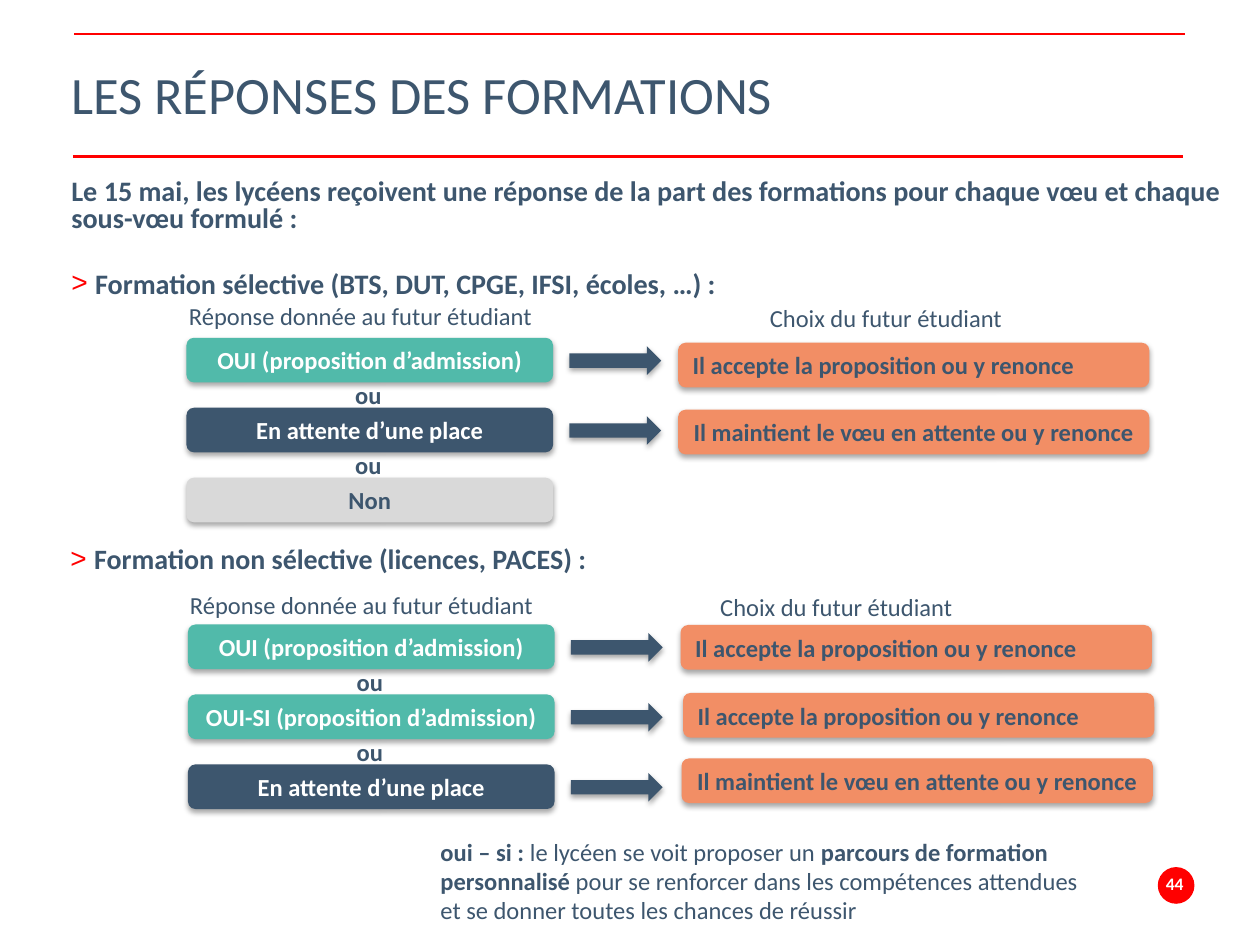
from lxml.etree import SubElement
from pptx import Presentation
from pptx.dml.color import RGBColor
from pptx.enum.shapes import MSO_CONNECTOR, MSO_SHAPE
from pptx.enum.text import MSO_ANCHOR, PP_ALIGN
from pptx.oxml.ns import qn
from pptx.util import Cm, Pt

RED = RGBColor(0xFF, 0x00, 0x00)
NAVY = RGBColor(0x3D, 0x56, 0x6E)
TEAL = RGBColor(0x51, 0xBA, 0xAA)
ORANGE = RGBColor(0xF2, 0x8E, 0x65)
GREY = RGBColor(0xD9, 0xD9, 0xD9)
WHITE = RGBColor(0xFF, 0xFF, 0xFF)

ROW_STEP = 1.41
YES = ("OUI (proposition d’admission)", TEAL, WHITE)
YES_IF = ("OUI-SI (proposition d’admission)", TEAL, WHITE)
WAITING = ("En attente d’une place", NAVY, WHITE)
NO = ("Non", GREY, NAVY)
ACCEPT = ("Il accepte la proposition ou y renonce", PP_ALIGN.LEFT)
KEEP = ("Il maintient le vœu en attente ou y renonce", PP_ALIGN.CENTER)


class SlideBuilder:
    font_name = "Calibri"
    body_size = 14

    def __init__(self, slide):
        self.slide = slide

    def style(self, paragraph, size=body_size, color=NAVY, bold=None):
        font = paragraph.font
        font.name = self.font_name
        font.size = Pt(size)
        font.color.rgb = color
        font.bold = bold

    def indent(self, paragraph, margin, first=0):
        properties = paragraph._p.get_or_add_pPr()
        properties.set("marL", str(Cm(margin)))
        properties.set("indent", str(Cm(first)))
        return properties

    def bullet(self, paragraph):
        properties = self.indent(paragraph, 0.48, -0.48)
        color = SubElement(properties, qn("a:buClr"))
        SubElement(color, qn("a:srgbClr"), val=str(RED))
        SubElement(properties, qn("a:buFont"), typeface="Arial")
        SubElement(properties, qn("a:buChar"), char=">")

    def rule(self, left, top, width):
        line = self.slide.shapes.add_connector(
            MSO_CONNECTOR.STRAIGHT, Cm(left), Cm(top), Cm(left + width), Cm(top))
        line.line.color.rgb = RED
        line.line.width = Pt(1.5)
        SubElement(line._element.spPr, qn("a:effectLst"))

    def text(self, box, words, align=None, anchor=MSO_ANCHOR.TOP, bulleted=False, **style):
        shape = self.slide.shapes.add_textbox(*map(Cm, box))
        frame = shape.text_frame
        frame.word_wrap = True
        frame.vertical_anchor = anchor
        paragraph = frame.paragraphs[0]
        paragraph.text = words
        paragraph.alignment = align
        if bulleted:
            self.bullet(paragraph)
        self.style(paragraph, **style)
        return frame

    def shape(self, kind, box, fill, shadow=True):
        shape = self.slide.shapes.add_shape(kind, *map(Cm, box))
        shape.fill.solid()
        shape.fill.fore_color.rgb = fill
        shape.line.fill.background()
        shape.shadow.inherit = False
        if shadow:
            effects = shape._element.spPr.find(qn("a:effectLst"))
            outer = SubElement(effects, qn("a:outerShdw"), blurRad=str(Pt(3.1)),
                               dist=str(Pt(1.8)), dir="5400000", rotWithShape="0")
            color = SubElement(outer, qn("a:srgbClr"), val="000000")
            SubElement(color, qn("a:alpha"), val="35000")
        return shape

    def label(self, left, top, width, words, fill, color, align=PP_ALIGN.CENTER):
        shape = self.shape(MSO_SHAPE.ROUNDED_RECTANGLE, (left, top, width, 0.9), fill)
        frame = shape.text_frame
        frame.word_wrap = True
        frame.vertical_anchor = MSO_ANCHOR.MIDDLE
        paragraph = frame.paragraphs[0]
        paragraph.text = words
        paragraph.alignment = align
        self.style(paragraph, color=color, bold=True)

    def answers(self, left, top, answers, arrow_count):
        for index, answer in enumerate(answers):
            row = top + index * ROW_STEP
            self.label(left, row, 7.39, *answer)
            if index < len(answers) - 1:
                self.text((left + 3.15, row + 0.73, 1.96, 0.86), "ou", bold=True)
            if index < arrow_count:
                self.shape(MSO_SHAPE.RIGHT_ARROW, (left + 7.72, row + 0.17, 1.85, 0.58), NAVY)

    def choice(self, left, top, words, align):
        self.label(left, top, 9.5, words, ORANGE, NAVY, align)

    def captions(self, answer_place, choice_place):
        self.text((*answer_place, 7.8, 0.86), "Réponse donnée au futur étudiant")
        self.text((*choice_place, 6.1, 0.86), "Choix du futur étudiant")


def main():
    presentation = Presentation()
    presentation.slide_width = Cm(25.4)
    presentation.slide_height = Cm(19.05)
    slide = presentation.slides.add_slide(presentation.slide_layouts[6])
    builder = SlideBuilder(slide)

    builder.rule(1.5, 0.69, 22.38)
    builder.rule(1.47, 3.15, 22.38)
    title = builder.text((1.19, 0.23, 22.66, 3.58), "LES RÉPONSES DES FORMATIONS",
                         anchor=MSO_ANCHOR.MIDDLE, size=30)
    title.paragraphs[0].line_spacing = Pt(28)

    intro = builder.text(
        (1.19, 3.51, 23.8, 2.74),
        "Le 15 mai, les lycéens reçoivent une réponse de la part des formations "
        "pour chaque vœu et chaque sous-vœu formulé :", size=16.1, bold=True)
    selective = intro.add_paragraph()
    selective.text = "Formation sélective (BTS, DUT, CPGE, IFSI, écoles, …) :"
    selective.space_before = Pt(22)
    builder.bullet(selective)
    builder.style(selective, size=16.1, bold=True)
    for paragraph in intro.paragraphs:
        paragraph.line_spacing = 0.8

    builder.captions((3.56, 5.94), (15.27, 5.99))
    builder.answers(3.76, 6.81, (YES, WAITING, NO), 2)
    builder.choice(13.67, 6.91, *ACCEPT)
    builder.choice(13.67, 8.26, *KEEP)

    builder.text((1.17, 10.8, 22.66, 1.35), "Formation non sélective (licences, PACES) :",
                 bulleted=True, size=16, bold=True)
    builder.captions((3.58, 11.76), (14.27, 11.81))
    builder.answers(3.79, 12.59, (YES, YES_IF, WAITING), 3)
    builder.choice(13.72, 12.6, *ACCEPT)
    builder.choice(13.77, 13.97, *ACCEPT)
    builder.choice(13.74, 15.29, *KEEP)

    note = builder.text((6.88, 16.74, 15.49, 2.06), "").paragraphs[0]
    builder.indent(note, 1.75)
    for words, bold in (
        ("oui – si : ", True),
        ("le lycéen se voit proposer un ", False),
        ("parcours de formation personnalisé", True),
        (" pour se renforcer dans les compétences attendues "
         "et se donner toutes les chances de réussir", False),
    ):
        run = note.add_run()
        run.text = words
        run.font.bold = bold

    builder.shape(MSO_SHAPE.OVAL, (23.34, 17.48, 0.74, 0.74), RED, shadow=False)
    builder.text((23.16, 17.45, 1.04, 0.74), "44", PP_ALIGN.CENTER, MSO_ANCHOR.MIDDLE,
                 size=10, color=WHITE, bold=True)

    presentation.save("out.pptx")


if __name__ == "__main__":
    main()
